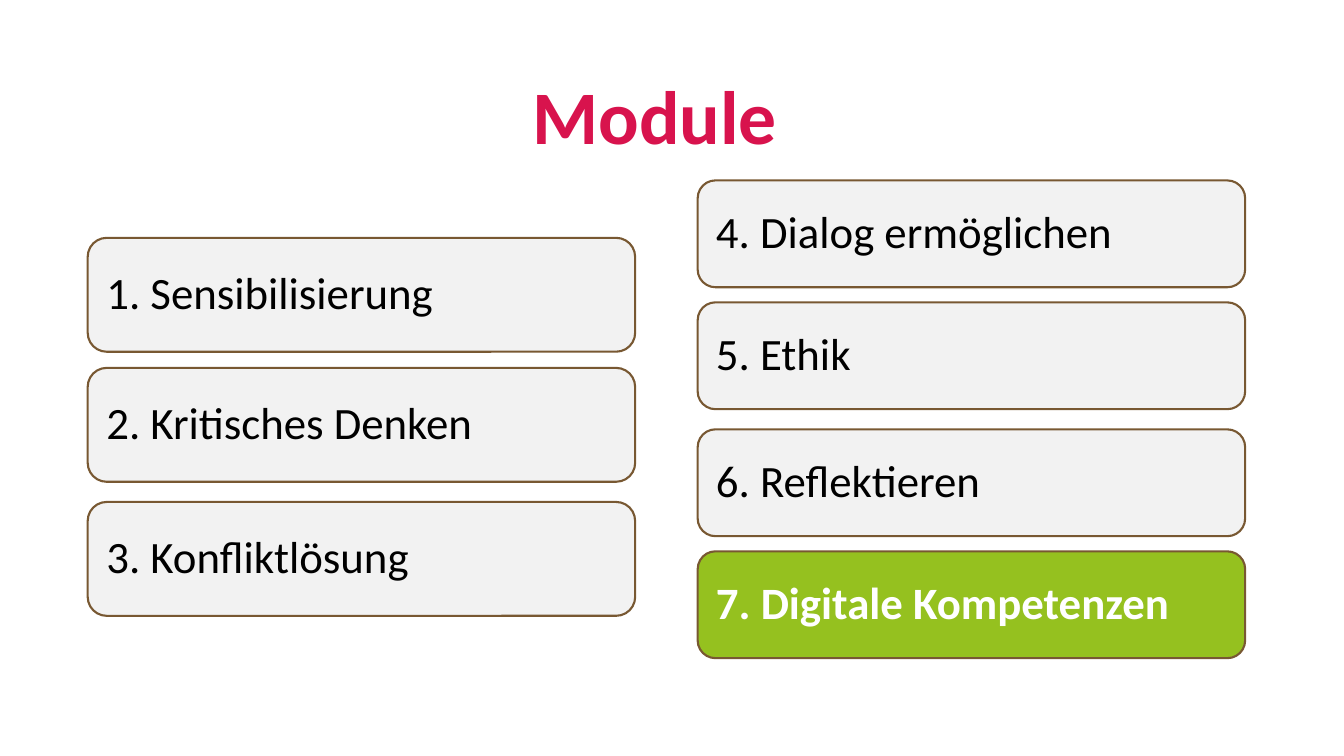
from pptx import Presentation
from pptx.dml.color import RGBColor
from pptx.enum.shapes import MSO_SHAPE
from pptx.enum.text import MSO_ANCHOR, MSO_AUTO_SIZE, PP_ALIGN
from pptx.util import Inches, Pt

ROUNDED = MSO_SHAPE.ROUNDED_RECTANGLE
MIDDLE = MSO_ANCHOR.MIDDLE
BOTTOM = MSO_ANCHOR.BOTTOM
NO_AUTOFIT = MSO_AUTO_SIZE.NONE
LEFT = PP_ALIGN.LEFT
CENTER = PP_ALIGN.CENTER

FONT = "Calibri"
COLORS = {
    "title": "D8134D",
    "card": "F2F2F2",
    "active": "95C11F",
    "border": "785832",
    "text": "000000",
    "active_text": "FFFFFF",
}
CARD_WIDTH = 5.43
CARD_INSET = Inches(0.13)
ACTIVE_MODULE = "7. Digitale Kompetenzen"
COLUMNS = [
    (0.87, 1.13, [
        (2.36, "1. Sensibilisierung"),
        (3.65, "2. Kritisches Denken"),
        (4.98, "3. Konfliktlösung"),
    ]),
    (6.92, 1.06, [
        (1.79, "4. Dialog ermöglichen"),
        (3.0, "5. Ethik"),
        (4.26, "6. Reflektieren"),
        (5.47, ACTIVE_MODULE),
    ]),
]


def color(name):
    return RGBColor.from_string(COLORS[name])


def format_paragraph(paragraph, size, color_name, bold, alignment):
    paragraph.alignment = alignment
    paragraph.line_spacing = 0.9
    paragraph.font.name = FONT
    paragraph.font.size = Pt(size)
    paragraph.font.bold = bold
    paragraph.font.color.rgb = color(color_name)


presentation = Presentation()
presentation.slide_width = Inches(13.33)
presentation.slide_height = Inches(7.5)
slide = presentation.slides.add_slide(presentation.slide_layouts[5])

title = slide.shapes.title
title.left, title.top = Inches(0.01), Inches(-0.3)
title.width, title.height = Inches(12.97), Inches(1.95)
title.text_frame.text = "Module"
title.text_frame.auto_size = NO_AUTOFIT
title.text_frame.vertical_anchor = BOTTOM
format_paragraph(title.text_frame.paragraphs[0], 54, "title", True, CENTER)

for left, height, modules in COLUMNS:
    for top, label in modules:
        active = label == ACTIVE_MODULE
        card = slide.shapes.add_shape(
            ROUNDED, Inches(left), Inches(top), Inches(CARD_WIDTH), Inches(height)
        )
        card.shadow.inherit = False
        card.fill.solid()
        card.fill.fore_color.rgb = color("active" if active else "card")
        card.line.color.rgb = color("border")
        card.line.width = Pt(1.5)

        frame = card.text_frame
        frame.text = label
        frame.word_wrap = True
        frame.vertical_anchor = MIDDLE
        frame.margin_left = frame.margin_right = CARD_INSET
        frame.margin_top = frame.margin_bottom = CARD_INSET
        text_color = "active_text" if active else "text"
        format_paragraph(frame.paragraphs[0], 32, text_color, active, LEFT)

presentation.save("out.pptx")
